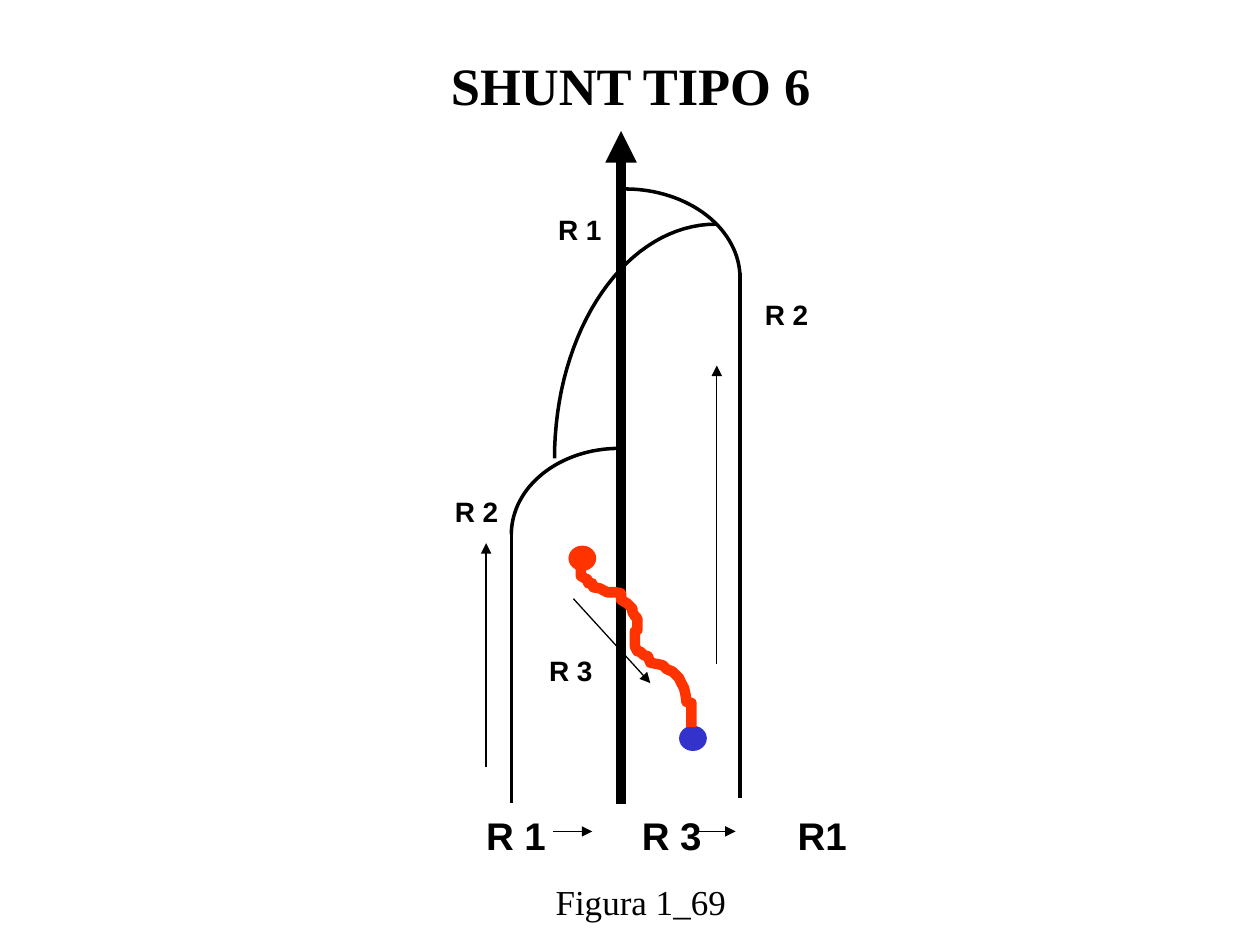
from math import cos, pi, sin

from lxml import etree
from pptx import Presentation, util as u
from pptx.dml.color import RGBColor
from pptx.enum import shapes, text
from pptx.oxml import ns

BLACK, RED, BLUE = "000000", "FF3300", "3333CC"
SANS, SERIF = "Arial", "Times New Roman"

# Course of the vein, in cm
VEIN = [
    (11.71, 11.33), (11.71, 11.61), (11.79, 11.66), (11.84, 11.68),
    (11.86, 11.76), (11.94, 11.76), (11.96, 11.84), (12.09, 11.86),
    (12.24, 11.94), (12.4, 11.94), (12.52, 11.96), (12.52, 12.09),
    (12.65, 12.17), (12.75, 12.27), (12.75, 12.34), (12.8, 12.42),
    (12.85, 12.47), (12.85, 12.7), (12.8, 12.73), (12.8, 13.03),
    (12.85, 13.13), (12.9, 13.13), (12.98, 13.21), (13.06, 13.23),
    (13.11, 13.36), (13.26, 13.39), (13.36, 13.41), (13.44, 13.49),
    (13.56, 13.54), (13.69, 13.67), (13.72, 13.74), (13.79, 13.87),
    (13.82, 14), (13.84, 14.15), (13.94, 14.17), (13.94, 14.66),
]


def tint(color):
    return RGBColor.from_string(color)


def cms(*nums):
    return [u.Cm(n) for n in nums]


def sub(parent, tag, **attrs):
    return etree.SubElement(parent, ns.qn(tag), attrs)


def write(box, words, size, face, bold=True, pad=True, tabs=()):
    """Fill a text frame with one styled line."""
    frame = box.text_frame
    frame.word_wrap = False
    frame.auto_size = text.MSO_AUTO_SIZE.NONE
    frame.vertical_anchor = text.MSO_ANCHOR.TOP
    if not pad:
        frame.margin_left = frame.margin_right = 0
        frame.margin_top = frame.margin_bottom = 0
    para = frame.paragraphs[0]
    para.text = words
    para.alignment = text.PP_ALIGN.LEFT
    if tabs:
        stops = sub(para._p.get_or_add_pPr(), "a:tabLst")
        for stop in tabs:
            sub(stops, "a:tab", pos=str(u.Cm(stop)), algn="l")
    font = para.font
    font.name, font.size, font.bold = face, u.Pt(size), bold
    font.color.rgb = tint(BLACK)


def label(slide, words, at, size, face=SANS, **style):
    write(slide.shapes.add_textbox(*cms(*at)), words, size, face, **style)


def line(slide, ends, width, arrow=False):
    link = slide.shapes.add_connector(
        shapes.MSO_CONNECTOR.STRAIGHT, *cms(*ends))
    link.line.color.rgb = tint(BLACK)
    link.line.width = u.Pt(width)
    if arrow:
        sub(link.line._get_or_add_ln(), "a:tailEnd", type="triangle")
    sub(link._element.spPr, "a:effectLst")


def trace(slide, points, color, width):
    """Draw an open, unfilled outline through points in cm."""
    start, *rest = [cms(*point) for point in points]
    pen = slide.shapes.build_freeform(*start)
    pen.add_line_segments(rest, close=False)
    curve = pen.convert_to_shape()
    curve.shadow.inherit = False
    curve.fill.background()
    curve.line.color.rgb = tint(color)
    curve.line.width = u.Pt(width)


def arch(slide, foot, crown, steps=32):
    """Draw a quarter ellipse from its upright foot to its level crown."""
    (fx, fy), (cx, cy) = foot, crown
    turns = [pi / 2 * i / steps for i in range(steps + 1)]
    trace(slide, [(cx + (fx - cx) * cos(t), fy + (cy - fy) * sin(t))
                  for t in turns], BLACK, 2)


def dot(slide, left, top, color):
    oval = slide.shapes.add_shape(
        shapes.MSO_SHAPE.OVAL, *cms(left, top, 0.56, 0.51))
    oval.shadow.inherit = False
    oval.fill.solid()
    oval.fill.fore_color.rgb = tint(color)
    oval.line.fill.background()


def main():
    deck = Presentation()
    deck.slide_width, deck.slide_height = cms(25.4, 19.05)
    slide = deck.slides.add_slide(deck.slide_layouts[5])

    # Title
    title = slide.shapes.title
    title.left, title.top, title.width, title.height = cms(
        9.09, 1.07, 7.29, 1.27)
    write(title, "SHUNT TIPO 6", 30, SERIF, pad=False)

    # Vessel arches and their straight trunks
    for foot, crown in (((10.31, 10.77), (12.48, 9.04)),
                        ((14.92, 5.61), (12.6, 3.81)),
                        ((11.18, 9.24), (14.43, 4.52))):
        arch(slide, foot, crown)
    line(slide, (14.92, 5.51, 14.92, 16.08), 2)
    line(slide, (10.31, 10.74, 10.31, 16.18), 2)

    # Network labels
    for words, left, top in (("R 1", 11.25, 4.29), ("R 2", 9.17, 9.96),
                             ("R 3", 11.07, 13.18), ("R 2", 15.42, 5.99)):
        label(slide, words, (left, top, 0.89, 0.69), 16, pad=False)

    # Path summary
    label(slide, "R 1\tR 3\tR1", (9.8, 16.38, 7.29, 0.94), 22,
          pad=False, tabs=(3.14, 6.28))

    # Entry and exit points
    dot(slide, 11.46, 11, RED)
    dot(slide, 13.69, 14.63, BLUE)

    # Main axis, then flow arrows
    line(slide, (12.52, 16.21, 12.52, 2.64), 6, arrow=True)
    for ends in ((11.56, 12.07, 13.11, 13.77), (14.45, 13.39, 14.45, 7.37),
                 (9.8, 15.47, 9.8, 10.95), (11.15, 16.76, 11.94, 16.76),
                 (14.07, 16.76, 14.83, 16.76)):
        line(slide, ends, 0.75, arrow=True)

    # Caption
    label(slide, "Figura 1_69", (10.95, 17.63, 3.94, 1.09), 20, SERIF,
          bold=False)

    # Winding vein
    trace(slide, VEIN, RED, 6)

    deck.save("out.pptx")


if __name__ == "__main__":
    main()
